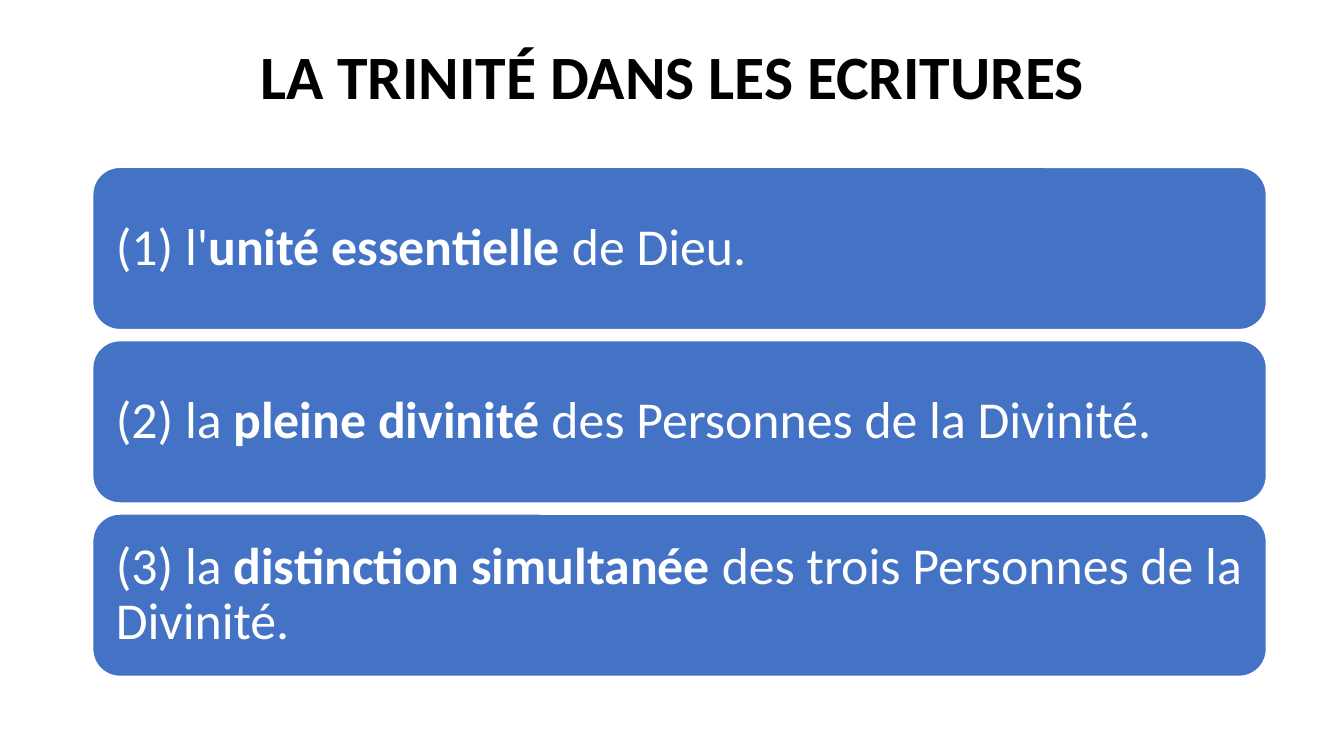
from pptx import Presentation
from pptx.dml.color import RGBColor
from pptx.enum.shapes import MSO_SHAPE
from pptx.enum.text import MSO_ANCHOR, MSO_AUTO_SIZE, PP_ALIGN
from pptx.util import Inches, Pt

ROUNDED = MSO_SHAPE.ROUNDED_RECTANGLE
MIDDLE = MSO_ANCHOR.MIDDLE
CENTER, LEFT = PP_ALIGN.CENTER, PP_ALIGN.LEFT

TITLE = "LA TRINITÉ DANS LES ECRITURES"
STATEMENTS = [
    ("(1) l'", "unité essentielle", " de Dieu."),
    ("(2) la ", "pleine divinité", " des Personnes de la Divinité."),
    ("(3) la ", "distinction simultanée", " des trois Personnes de la Divinité."),
]

THEME = {
    "font": "Calibri",
    "title_size": Pt(44),
    "statement_size": Pt(37),
    "black": RGBColor(0x00, 0x00, 0x00),
    "white": RGBColor(0xFF, 0xFF, 0xFF),
    "blue": RGBColor(0x44, 0x72, 0xC4),
}

SLIDE_WIDTH, SLIDE_HEIGHT = Inches(13.33), Inches(7.5)
MARGIN = Inches(0.92)
TITLE_TOP, TITLE_WIDTH, TITLE_HEIGHT = Inches(0.4), Inches(11.5), Inches(1.45)
BAR_TOP, BAR_WIDTH, BAR_HEIGHT = Inches(1.66), Inches(11.64), Inches(1.61)
BAR_PITCH = Inches(1.72)
BAR_INSET = Inches(0.15)


def apply(target, values):
    for name, value in values.items():
        setattr(target, name, value)


def add_run(paragraph, text, size, color, bold):
    run = paragraph.add_run()
    run.text = text
    apply(run.font, {"name": THEME["font"], "size": size, "bold": bold})
    run.font.color.rgb = color


def format_title(title):
    apply(title, {"left": MARGIN, "top": TITLE_TOP,
                  "width": TITLE_WIDTH, "height": TITLE_HEIGHT})
    apply(title.text_frame, {"vertical_anchor": MIDDLE, "word_wrap": True,
                             "auto_size": MSO_AUTO_SIZE.NONE,
                             "margin_bottom": Inches(0.72)})
    paragraph = title.text_frame.paragraphs[0]
    apply(paragraph, {"alignment": CENTER, "line_spacing": 0.9})
    add_run(paragraph, TITLE, THEME["title_size"], THEME["black"], True)


def add_bar(slide, row, parts):
    bar = slide.shapes.add_shape(ROUNDED, MARGIN, BAR_TOP + row * BAR_PITCH,
                                 BAR_WIDTH, BAR_HEIGHT)
    bar.shadow.inherit = False
    bar.fill.solid()
    bar.fill.fore_color.rgb = THEME["blue"]
    bar.line.color.rgb = THEME["white"]
    bar.line.width = Pt(1)
    frame = bar.text_frame
    apply(frame, {"vertical_anchor": MIDDLE, "word_wrap": True})
    apply(frame, {f"margin_{side}": BAR_INSET
                  for side in ("left", "top", "right", "bottom")})
    paragraph = frame.paragraphs[0]
    apply(paragraph, {"alignment": LEFT, "line_spacing": 0.9})
    for text, bold in zip(parts, (False, True, False)):
        add_run(paragraph, text, THEME["statement_size"], THEME["white"], bold)


def main():
    presentation = Presentation()
    apply(presentation, {"slide_width": SLIDE_WIDTH, "slide_height": SLIDE_HEIGHT})
    slide = presentation.slides.add_slide(presentation.slide_layouts[5])
    format_title(slide.shapes.title)
    for row, parts in enumerate(STATEMENTS):
        add_bar(slide, row, parts)
    presentation.save("out.pptx")


if __name__ == "__main__":
    main()
